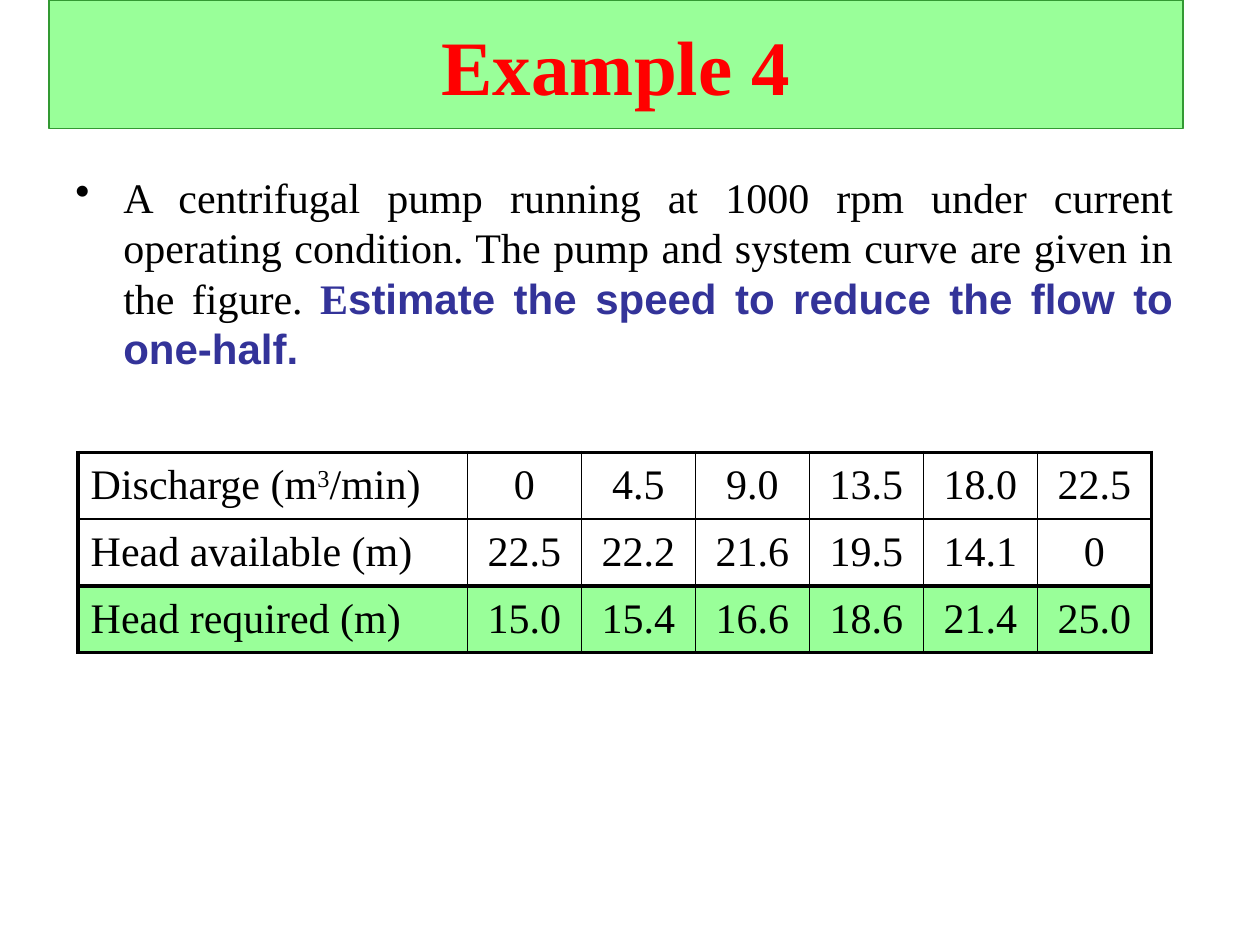
from pptx import Presentation
from pptx.dml.color import RGBColor
from pptx.enum.shapes import MSO_SHAPE
from pptx.enum.text import MSO_ANCHOR, PP_ALIGN
from pptx.oxml import parse_xml
from pptx.oxml.ns import nsdecls
from pptx.util import Inches, Pt

RECT = MSO_SHAPE.RECTANGLE
MIDDLE = MSO_ANCHOR.MIDDLE
LEFT, CENTER, JUSTIFY = PP_ALIGN.LEFT, PP_ALIGN.CENTER, PP_ALIGN.JUSTIFY

COLORS = {"green": "99FF99", "edge": "339933", "red": "FF0000",
          "blue": "333399", "black": "000000"}
SERIF, SANS = "Times New Roman", "Arial"
THIN, THICK = 1, 2.25

ROWS = [
    ["Discharge (m³/min)", "0", "4.5", "9.0", "13.5", "18.0", "22.5"],
    ["Head available (m)", "22.5", "22.2", "21.6", "19.5", "14.1", "0"],
    ["Head required (m)", "15.0", "15.4", "16.6", "18.6", "21.4", "25.0"],
]


def rgb(name):
    return RGBColor.from_string(COLORS[name])


def add_run(p, text, size=24, color="black", font=SERIF, bold=False):
    r = p.add_run()
    r.text = text
    r.font.size, r.font.name, r.font.bold = Pt(size), font, bold
    r.font.color.rgb = rgb(color)
    return r


def add_title(s, x, y, w, h):
    sp = s.shapes.add_shape(RECT, Inches(x), Inches(y), Inches(w), Inches(h))
    sp.shadow.inherit = False
    sp.fill.solid()
    sp.fill.fore_color.rgb = rgb("green")
    sp.line.color.rgb = rgb("edge")
    sp.line.width = Pt(0.75)
    tf = sp.text_frame
    tf.vertical_anchor = MIDDLE
    p = tf.paragraphs[0]
    p.alignment = CENTER
    add_run(p, "Example 4", 44, "red", bold=True)


def add_problem(s, x, y, w, h):
    tf = s.shapes.add_textbox(Inches(x), Inches(y), Inches(w), Inches(h)).text_frame
    tf.word_wrap = True
    p = tf.paragraphs[0]
    p.alignment = JUSTIFY
    p.space_before = Pt(5)
    # Hanging bullet
    pPr = p._p.get_or_add_pPr()
    pPr.set("marL", str(Inches(0.38)))
    pPr.set("indent", str(-Inches(0.38)))
    pPr.append(parse_xml(f'<a:buChar {nsdecls("a")} char="•"/>'))
    add_run(p, "A centrifugal pump running at 1000 rpm under current operating "
               "condition. The pump and system curve are given in the figure. ")
    add_run(p, "E", color="blue", bold=True)
    add_run(p, "stimate the speed to reduce the flow to one-half.",
            color="blue", font=SANS, bold=True)


def set_borders(cell, widths):
    tcPr = cell._tc.get_or_add_tcPr()
    for i, (side, width) in enumerate(widths.items()):
        tcPr.insert(i, parse_xml(
            f'<a:ln{side} {nsdecls("a")} w="{Pt(width)}"><a:solidFill>'
            f'<a:srgbClr val="{COLORS["black"]}"/></a:solidFill></a:ln{side}>'))


def add_pump_table(s, x, y, w, h):
    n_rows, n_cols = len(ROWS), len(ROWS[0])
    table = s.shapes.add_table(n_rows, n_cols, Inches(x), Inches(y),
                               Inches(w), Inches(h)).table
    table.first_row = table.horz_banding = False
    label_w = 3.09
    for j, col in enumerate(table.columns):
        col.width = Inches(label_w if j == 0 else (w - label_w) / (n_cols - 1))
    for i, row in enumerate(ROWS):
        table.rows[i].height = Inches(h / n_rows)
        last = i == n_rows - 1
        for j, text in enumerate(row):
            cell = table.cell(i, j)
            cell.vertical_anchor = MIDDLE
            if last:
                cell.fill.solid()
                cell.fill.fore_color.rgb = rgb("green")
            else:
                cell.fill.background()
            p = cell.text_frame.paragraphs[0]
            p.alignment = CENTER if j else LEFT
            p.space_before = Pt(5)
            before, cubed, after = text.partition("³")
            add_run(p, before)
            if cubed:
                add_run(p, "3")._r.get_or_add_rPr().set("baseline", "30000")
                add_run(p, after)
            # Heavy frame, and a heavy rule above the last row
            set_borders(cell, {
                "L": THICK if j == 0 else THIN,
                "R": THICK if j == n_cols - 1 else THIN,
                "T": THICK if i == 0 or last else THIN,
                "B": THICK if i >= n_rows - 2 else THIN,
            })


def main():
    prs = Presentation()
    prs.slide_width, prs.slide_height = Inches(10), Inches(7.5)
    s = prs.slides.add_slide(prs.slide_layouts[6])
    add_title(s, 0.39, 0, 9, 1.02)
    add_problem(s, 0.5, 1.31, 8.91, 1.74)
    add_pump_table(s, 0.62, 3.59, 8.52, 1.59)
    prs.save("out.pptx")


if __name__ == "__main__":
    main()
